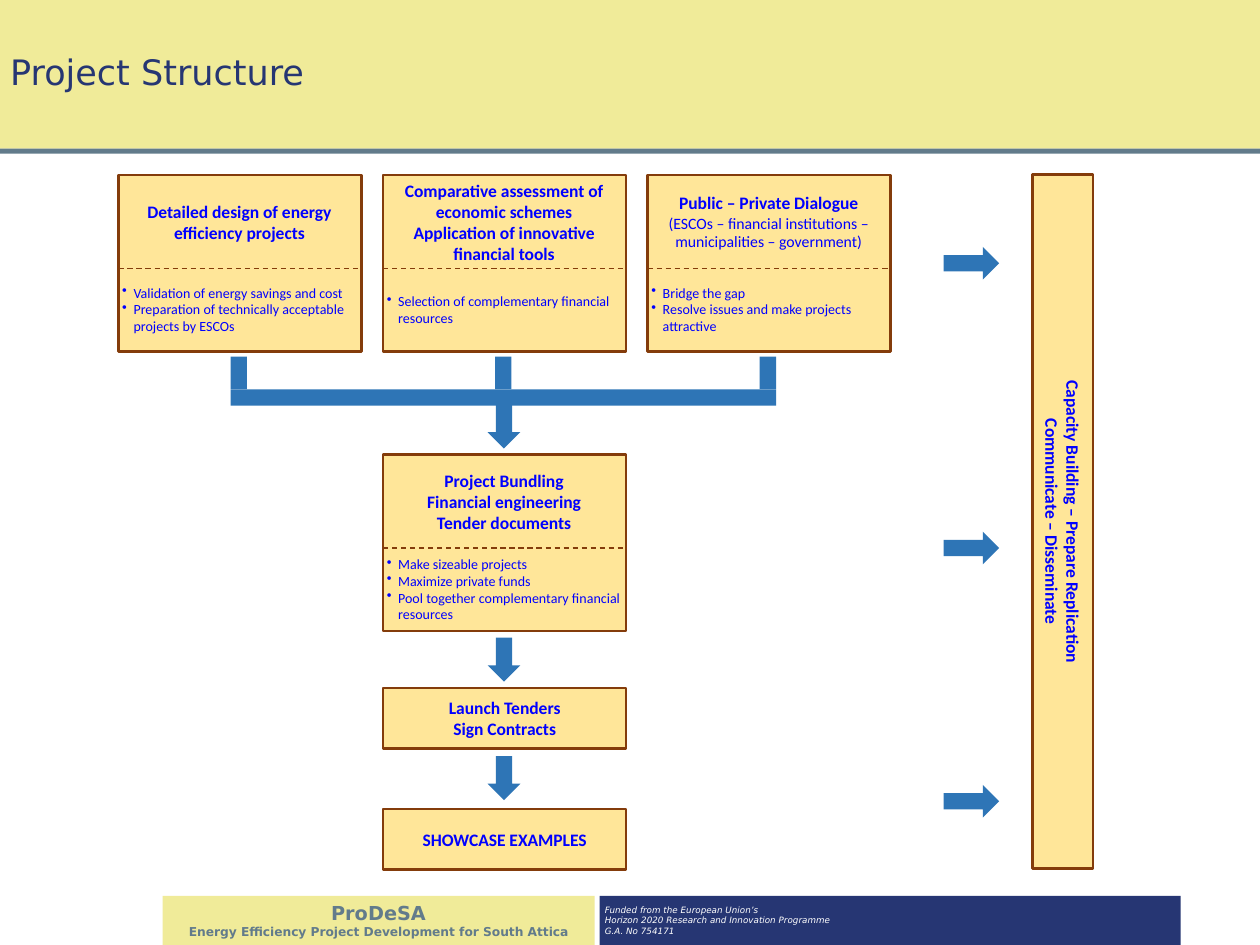
import pptx
import pptx.util
import pptx.dml.color
import pptx.enum.dml
import pptx.enum.shapes
import pptx.enum.text
import pptx.oxml
import pptx.oxml.ns

Inches, Pt = pptx.util.Inches, pptx.util.Pt
KIND = pptx.enum.shapes.MSO_SHAPE
ALIGN = pptx.enum.text.PP_ALIGN
MIDDLE = pptx.enum.text.MSO_ANCHOR.MIDDLE

HUES = {
    "lime": "F0EB99", "slate": "627B8B", "navy": "263673", "white": "FFFFFF",
    "sand": "FFE699", "brown": "843C0B", "blue": "0000FF", "arrow": "2E75B6",
}
SANS, BODY = "DejaVu Sans", "Calibri"
WIDE = 1.93           # box width
LANES = (0.94, 3.04, 5.14)  # left edges of the three columns
MID = LANES[1]


def hue(name):
    return pptx.dml.color.RGBColor.from_string(HUES[name])


def shape(slide, left, top, width, height, fill, kind=KIND.RECTANGLE, edge=None):
    item = slide.shapes.add_shape(
        kind, Inches(left), Inches(top), Inches(width), Inches(height))
    item.shadow.inherit = False
    item.fill.solid()
    item.fill.fore_color.rgb = hue(fill)
    if edge:
        item.line.color.rgb = hue(edge)
        item.line.width = Pt(1.5)
    else:
        item.line.fill.background()
    return item


def bullet(para):
    props = para._p.get_or_add_pPr()
    props.set("marL", str(Inches(0.1)))
    props.set("indent", str(Inches(-0.09)))
    mark = pptx.oxml.parse_xml(
        f'<a:buChar {pptx.oxml.ns.nsdecls("a")} char="•"/>')
    props.append(mark)


def write(item, lines, size=10, font=BODY, color="blue", bold=False,
          italic=False, align=ALIGN.CENTER, inset=0.04, dots=False, rest=None):
    """Fill a shape with one paragraph a line; rest overrides (size, bold) after the first."""
    frame = item.text_frame
    frame.word_wrap = True
    frame.vertical_anchor = MIDDLE
    frame.margin_left = frame.margin_right = Inches(inset)
    frame.margin_top = frame.margin_bottom = Inches(inset)
    for i, line in enumerate(lines):
        para = frame.paragraphs[0] if i == 0 else frame.add_paragraph()
        para.alignment = align
        if dots:
            bullet(para)
        run = para.add_run()
        run.text = line
        points, heavy = rest if rest and i else (size, bold)
        run.font.size = Pt(points)
        run.font.bold = heavy
        run.font.italic = italic
        run.font.name = font
        run.font.color.rgb = hue(color)


def divide(slide, left, top):
    rule = slide.shapes.add_connector(
        pptx.enum.shapes.MSO_CONNECTOR.STRAIGHT,
        Inches(left), Inches(top), Inches(left + WIDE), Inches(top))
    rule.line.color.rgb = hue("brown")
    rule.line.width = Pt(0.75)
    rule.line.dash_style = pptx.enum.dml.MSO_LINE.DASH
    rule._element.spPr.append(pptx.oxml.parse_xml(
        f'<a:effectLst {pptx.oxml.ns.nsdecls("a")}/>'))


def card(slide, left, top, heads, points, rest=None):
    """A framed box with a heading over a dashed rule and bullets under it."""
    shape(slide, left, top, WIDE, 1.4, "sand", edge="brown")
    head = shape(slide, left + 0.02, top + 0.02, 1.88, 0.7, "sand")
    write(head, heads, bold=True, rest=rest)
    divide(slide, left, top + 0.74)
    body = shape(slide, left + 0.02, top + 0.76, 1.88, 0.61, "sand")
    write(body, points, size=8, align=ALIGN.LEFT, inset=0, dots=True)


def label(slide, left, top, width, lines, turn=0):
    box = shape(slide, left, top, width, 0.48, "sand", edge="brown")
    box.rotation = turn
    write(box, lines, bold=True)


def header(slide):
    title = slide.shapes.title
    title.left, title.top = Inches(0), Inches(0)
    title.width, title.height = Inches(10), Inches(1.18)
    title.fill.solid()
    title.fill.fore_color.rgb = hue("lime")
    title.text_frame.auto_size = pptx.enum.text.MSO_AUTO_SIZE.NONE
    write(title, ["Project Structure"], size=20, font=SANS, color="navy",
          align=ALIGN.LEFT, inset=0.08)
    title.text_frame.paragraphs[0].line_spacing = 0.9
    shape(slide, 0, 1.18, 10, 0.04, "slate")


def footer(slide):
    fund = shape(slide, 4.76, 7.11, 4.61, 0.39, "navy")
    write(fund, ["Funded from the European Union’s",
                 "Horizon 2020 Research and Innovation Programme",
                 "G.A. No 754171"],
          size=5, font=SANS, color="white", italic=True, align=ALIGN.LEFT)
    name = shape(slide, 1.29, 7.11, 3.43, 0.39, "lime")
    write(name, ["ProDeSA", "Energy Efficiency Project Development for South Attica"],
          size=11, font=SANS, color="slate", bold=True, rest=(7, True))


def main():
    deck = pptx.Presentation()
    deck.slide_width, deck.slide_height = Inches(10), Inches(7.5)
    slide = deck.slides.add_slide(deck.slide_layouts[5])
    header(slide)
    footer(slide)

    # Bracket that joins the three columns
    shape(slide, 1.83, 3.09, 4.33, 0.13, "arrow")
    for left in LANES:
        shape(slide, left + 0.89, 2.83, 0.13, 0.26, "arrow")

    # Arrows down the middle column and across to the side bar
    for top in (3.21, 5.06, 6):
        shape(slide, 3.87, top, 0.26, 0.35, "arrow", KIND.DOWN_ARROW)
    for top in (1.96, 4.22, 6.23):
        shape(slide, 7.49, top, 0.44, 0.26, "arrow", KIND.RIGHT_ARROW)

    # Top row of cards, then the bundling card
    row = (
        (["Detailed design of energy efficiency projects"],
         ["Validation of energy savings and cost",
          "Preparation of technically acceptable projects by ESCOs"], None),
        (["Comparative assessment of economic schemes",
          "Application of innovative financial tools"],
         ["Selection of complementary financial resources"], None),
        (["Public – Private Dialogue",
          "(ESCOs – financial institutions – municipalities – government)"],
         ["Bridge the gap", "Resolve issues and make projects attractive"],
         (9, False)),
    )
    for left, (heads, points, rest) in zip(LANES, row):
        card(slide, left, 1.39, heads, points, rest)
    card(slide, MID, 3.61,
         ["Project Bundling", "Financial engineering", "Tender documents"],
         ["Make sizeable projects", "Maximize private funds",
          "Pool together complementary financial resources"])

    # Final steps and the upright side bar
    label(slide, MID, 5.46, WIDE, ["Launch Tenders", "Sign Contracts"])
    label(slide, MID, 6.42, WIDE, ["SHOWCASE EXAMPLES"])
    label(slide, 5.68, 3.9, 5.51,
          ["Capacity Building – Prepare Replication", "Communicate – Disseminate"],
          turn=90)

    deck.save("out.pptx")


if __name__ == "__main__":
    main()
